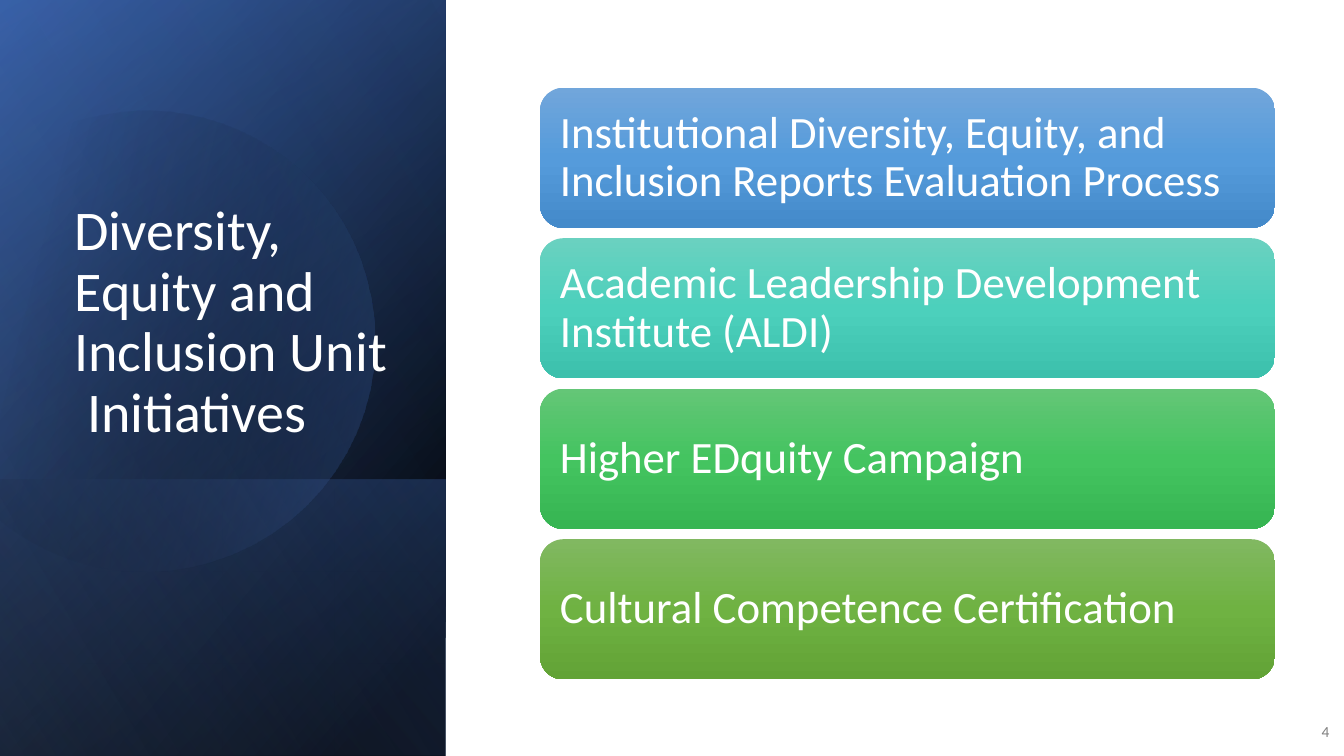
import math
from dataclasses import dataclass

import pptx
import pptx.dml.color
import pptx.enum.shapes
import pptx.enum.text
import pptx.oxml
import pptx.oxml.ns
import pptx.util

Cm = pptx.util.Cm
SHAPE = pptx.enum.shapes.MSO_SHAPE
ALIGN = pptx.enum.text.PP_ALIGN
ANCHOR = pptx.enum.text.MSO_ANCHOR


@dataclass(frozen=True)
class Theme:
    font: str = "Calibri"
    text: str = "FFFFFF"
    number: str = "808080"
    title_size: int = 40
    card_size: int = 32
    number_size: int = 11
    # Gradient stops: position %, colour, opacity %
    base: tuple = ((8, "000000", 100), (100, "2F5597", 100))
    glow: tuple = ((0, "000000", 0), (99, "4472C4", 46))
    foot: tuple = ((2, "4472C4", 29), (100, "000000", 30))
    disc: tuple = ((29, "000000", 0), (100, "4472C4", 43))
    sheen: tuple = ((0, "000000", 0), (99, "8FAADC", 11))
    cards: tuple = (
        ("71A6DB", "559BDB", "448ACA"),
        ("6AD1C0", "4CD0BC", "3CC0AC"),
        ("64C677", "44C460", "36B552"),
        ("81B861", "6FB242", "62A336"),
    )


THEME = Theme()

TITLE = "Diversity, Equity and Inclusion Unit  Initiatives"
INITIATIVES = (
    "Institutional Diversity, Equity, and Inclusion Reports Evaluation Process",
    "Academic Leadership Development Institute (ALDI)",
    "Higher EDquity Campaign",
    "Cultural Competence Certification",
)

# Disc outline in cm from the panel corner: one point is a line, three a curve
DISC_START = (3.78, 2.79)
DISC_CENTRE = (4.03, 8.5)
DISC_TILT = 16.1
DISC_SEGMENTS = (
    ((6.25, 2.84), (8.53, 4.5), (9.22, 6.99)),
    ((10.11, 10.08), (8.33, 13.28), (5.26, 14.17)),
    ((3.33, 14.73), (1.35, 14.25), (-0.08, 13.06)),
    ((-0.38, 12.78),),
    ((-0.38, 4.45),),
    ((0, 4.09),),
    ((0.58, 3.61), (1.27, 3.25), (2.03, 3.02)),
    ((2.62, 2.87), (3.2, 2.79), DISC_START),
)


def paint(sp, stops, angle):
    """Give a shape a linear gradient, no outline and no shadow."""
    sp.shadow.inherit = False
    sp.line.fill.background()
    sp.fill.background()
    marks = "".join(
        f'<a:gs pos="{pos * 1000}"><a:srgbClr val="{color}">'
        f'<a:alpha val="{alpha * 1000}"/></a:srgbClr></a:gs>'
        for pos, color, alpha in stops)
    grad = pptx.oxml.parse_xml(
        f'<a:gradFill {pptx.oxml.ns.nsdecls("a")} rotWithShape="1">'
        f'<a:gsLst>{marks}</a:gsLst>'
        f'<a:lin ang="{angle * 60000}" scaled="0"/></a:gradFill>')
    spPr = sp._element.spPr
    spPr.replace(spPr.find(pptx.oxml.ns.qn("a:noFill")), grad)


def write(sp, text, size, color=THEME.text, align=ALIGN.LEFT,
          anchor=ANCHOR.MIDDLE, spacing=None, inset=None):
    tf = sp.text_frame
    tf.word_wrap = True
    tf.vertical_anchor = anchor
    if inset is not None:
        tf.margin_left = tf.margin_right = Cm(inset)
        tf.margin_top = tf.margin_bottom = Cm(inset)
    p = tf.paragraphs[0]
    p.alignment = align
    p.line_spacing = spacing
    r = p.add_run()
    r.text = text
    r.font.name = THEME.font
    r.font.size = pptx.util.Pt(size)
    r.font.color.rgb = pptx.dml.color.RGBColor.from_string(color)


def add_layer(slide, box, stops, angle):
    """Fill the box with a mirrored rectangle turned by a quarter."""
    x, y, w, h = box
    shift = (w - h) / 2
    sp = slide.shapes.add_shape(
        SHAPE.RECTANGLE, Cm(x + shift), Cm(y - shift), Cm(h), Cm(w))
    sp.rotation = 90
    sp._element.spPr.find(pptx.oxml.ns.qn("a:xfrm")).set("flipH", "1")
    paint(sp, stops, angle)


def disc_points(steps=16):
    points = [DISC_START]
    for segment in DISC_SEGMENTS:
        if len(segment) == 1:
            points.append(segment[0])
            continue
        curve = (points[-1], *segment)
        for i in range(1, steps + 1):
            t = i / steps
            weights = [math.comb(3, k) * t**k * (1 - t)**(3 - k) for k in range(4)]
            points.append(tuple(
                sum(wt * pt[axis] for wt, pt in zip(weights, curve))
                for axis in (0, 1)))
    return points


def add_disc(slide, box):
    """Draw the outline turned forward, then turn the whole shape back."""
    cx, cy = DISC_CENTRE
    c, s = math.cos(math.radians(DISC_TILT)), math.sin(math.radians(DISC_TILT))
    points = [
        (Cm(box[0] + cx + (x - cx) * c - (y - cy) * s),
         Cm(box[1] + cy + (x - cx) * s + (y - cy) * c))
        for x, y in disc_points()]
    builder = slide.shapes.build_freeform(*points[0])
    builder.add_line_segments(points[1:], close=True)
    sp = builder.convert_to_shape()
    sp.rotation = 360 - DISC_TILT
    paint(sp, THEME.disc, 30)


def add_title_panel(slide, box):
    x, y, w, h = box
    foot_h = 6.96
    add_layer(slide, box, THEME.base, 50)
    add_layer(slide, box, THEME.glow, 30)
    add_layer(slide, (x, y + h - foot_h, w, foot_h), THEME.foot, 130)
    add_disc(slide, box)
    add_layer(slide, box, THEME.sheen, 120)
    # Title
    sp = slide.shapes.add_textbox(Cm(x + 1.63), Cm(y + 4.67), Cm(8.66), Cm(6.65))
    write(sp, TITLE, THEME.title_size, anchor=ANCHOR.BOTTOM, spacing=0.9)


def add_cards(slide, box, gap=0.26):
    x, y, w, h = box
    card_h = (h - gap * (len(INITIATIVES) - 1)) / len(INITIATIVES)
    for i, (text, colors) in enumerate(zip(INITIATIVES, THEME.cards)):
        sp = slide.shapes.add_shape(
            SHAPE.ROUNDED_RECTANGLE,
            Cm(x), Cm(y + i * (card_h + gap)), Cm(w), Cm(card_h))
        paint(sp, [(pos, color, 100) for pos, color in zip((0, 50, 100), colors)], 90)
        write(sp, text, THEME.card_size, spacing=0.9, inset=0.33)


def add_page_number(slide, box):
    sp = slide.shapes.add_textbox(*map(Cm, box))
    write(sp, "4", THEME.number_size, color=THEME.number, align=ALIGN.RIGHT)


def main():
    prs = pptx.Presentation()
    prs.slide_width, prs.slide_height = Cm(33.87), Cm(19.05)
    slide = prs.slides.add_slide(prs.slide_layouts[6])
    add_title_panel(slide, (0, 0, 11.23, 19.05))
    add_page_number(slide, (32.51, 17.93, 1.24, 1.02))
    add_cards(slide, (13.61, 2.21, 18.52, 14.91))
    prs.save("out.pptx")


if __name__ == "__main__":
    main()
